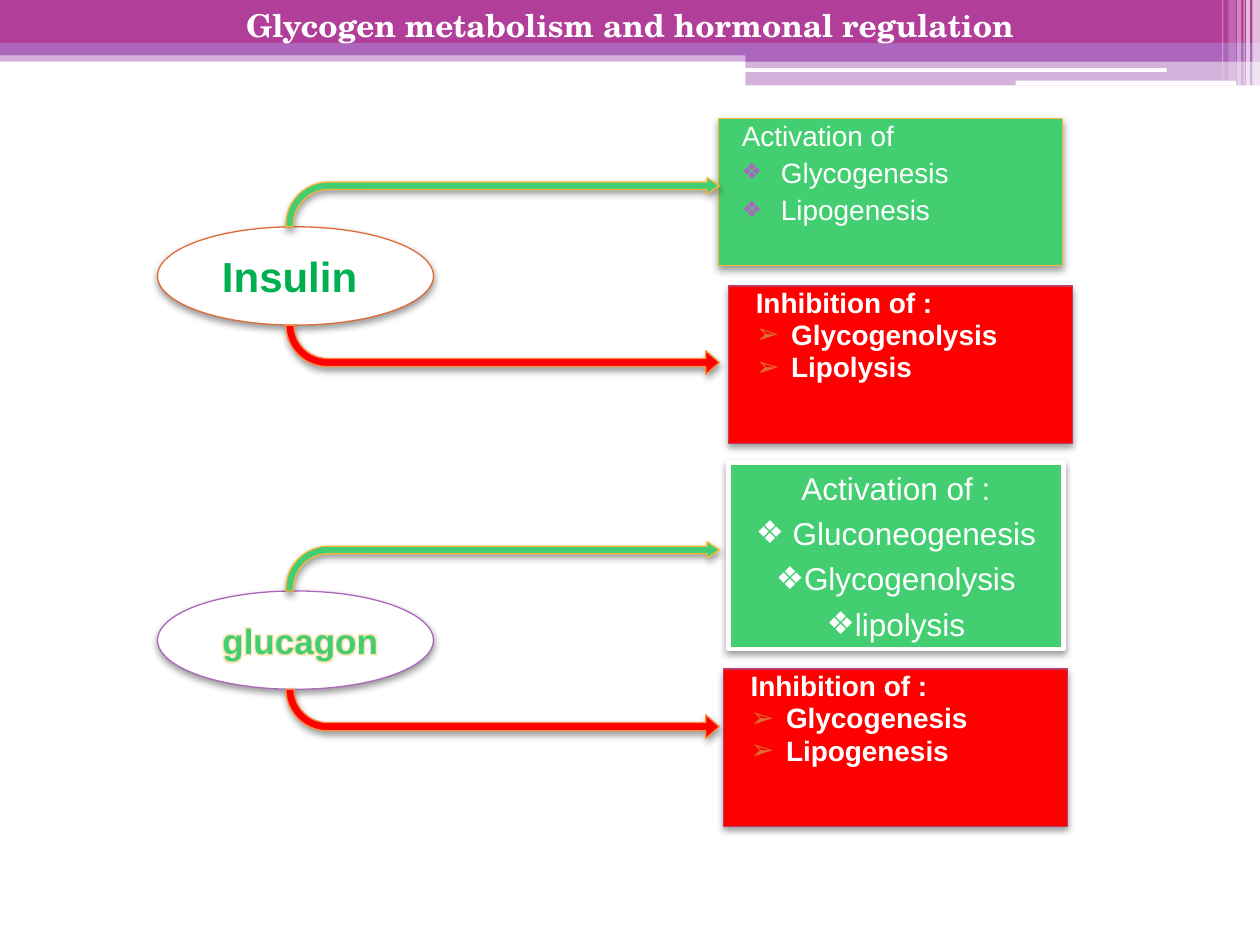
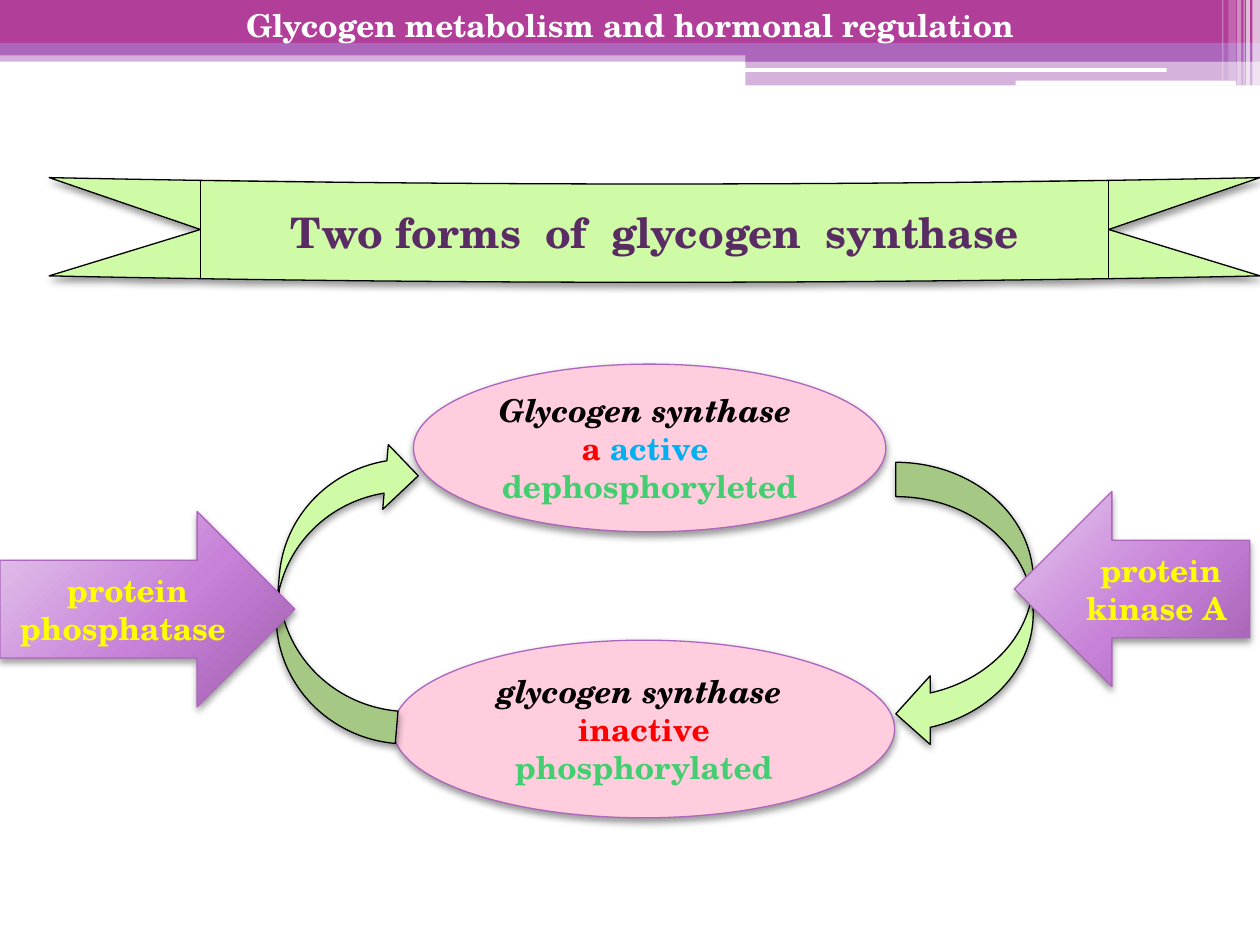
from lxml import etree
from pptx import Presentation
from pptx.dml.color import RGBColor
from pptx.enum import shapes, text
from pptx.oxml import ns
from pptx.util import Pt

MAGENTA = RGBColor(0xB1, 0x3F, 0x9A)
PURPLE = RGBColor(0xAC, 0x66, 0xBB)
PLUM = RGBColor(0x5A, 0x2C, 0x64)
WHITE = RGBColor(0xFF, 0xFF, 0xFF)
BLACK = RGBColor(0, 0, 0)
GREEN = RGBColor(0x44, 0xCE, 0x72)
DARK_GREEN = RGBColor(0x00, 0xB0, 0x50)
LIME = RGBColor(0xCF, 0xFB, 0xA7)
RED = RGBColor(0xFF, 0, 0)
ROSE = RGBColor(0xB8, 0x3D, 0x68)
PINK = RGBColor(0xFF, 0xCD, 0xDD)
RUST = RGBColor(0xDE, 0x6C, 0x36)
ORANGE = RGBColor(0xFA, 0x8D, 0x3D)
GOLD = RGBColor(0xF9, 0xB6, 0x39)
BLUE = RGBColor(0x00, 0xB0, 0xF0)
YELLOW = RGBColor(0xFF, 0xFF, 0)
VIOLET_STOPS = [(0, "E4C8EC"), (55, "C781D8"), (100, "A05FAE")]

SANS, SERIF = "Arial", "TeX Gyre Schola"
KIND = shapes.MSO_SHAPE
CENTER = text.PP_ALIGN.CENTER
TITLE = "Glycogen metabolism and hormonal regulation"

# kind, (left, top, width, height), colour, opacity in percent
BANDS = [
    (KIND.RECTANGLE, (0, 28.8, 720, 6.5), PURPLE, 50),
    (KIND.RECTANGLE, (0, 0, 720, 24.5), MAGENTA, 100),
    (KIND.RECTANGLE, (0, 24.5, 720, 7.2), PURPLE, 100),
    (KIND.RECTANGLE, (426, 28.1, 294, 7.2), PURPLE, 100),
    (KIND.RECTANGLE, (426, 34.6, 294, 14.2), PURPLE, 50),
    (KIND.ROUNDED_RECTANGLE, (425.5, 38.9, 241.2, 2.2), WHITE, 100),
    (KIND.ROUNDED_RECTANGLE, (580.3, 46.1, 126, 2.9), WHITE, 100),
]
# left, width, height, opacity in percent
STRIPES = [
    (715.7, 4.3, 49, 65), (712.1, 2.2, 49, 65), (710.6, 0.7, 49, 60),
    (707, 2.2, 49, 40), (702, 4.3, 46, 20), (698.4, 0.7, 46, 30),
]

ACTIVATION = dict(fill=GREEN, line=GOLD, size=16, bold=False, before=6,
                  spacing=0.8, margin=28.8, indent=-22.3,
                  bullet="❖", bullet_color=PURPLE, bullet_size=80)
FRAMED = dict(fill=GREEN, line=WHITE, line_width=2.5, size=18, bold=False,
              before=4.3, align=CENTER, bullet="❖", bullet_color=WHITE)
INHIBITION = dict(fill=RED, line=ROSE, size=16, bold=True, before=3,
                  spacing=0.8, margin=28.8, indent=-20.2,
                  bullet="➢", bullet_color=RUST)

HORMONES = [
    dict(name="Insulin ", top=129.6, color=DARK_GREEN, size=24, line=RUST, glow=False,
         effects=[
             ((416.2, 163.4, 196.6, 90), INHIBITION,
              ["Inhibition of :", "Glycogenolysis", "Lipolysis"]),
             ((410.4, 67.7, 196.6, 84.2), ACTIVATION,
              ["Activation of", "Glycogenesis", "Lipogenesis"])]),
    dict(name=" glucagon ", top=337.7, color=GREEN, size=20, line=PURPLE, glow=True,
         effects=[
             ((416.2, 264.2, 191.5, 106.6), FRAMED,
              ["Activation of :", " Gluconeogenesis", "Glycogenolysis", "lipolysis"]),
             ((413.3, 382.3, 196.6, 90), INHIBITION,
              ["Inhibition of :", "Glycogenesis", "Lipogenesis"])]),
]
HORMONE_LEFT, HORMONE_WIDTH, HORMONE_HEIGHT = 90, 157.7, 56.2
ARROW_LEFT, ARROW_WIDTH, ARROW_HEIGHT = 163.4, 247.7, 28.1

# box, then lines made of (words, colour, italic)
SYNTHASE_FORMS = [
    ((236.2, 208.1, 270, 95.8),
     [[("Glycogen synthase ", BLACK, True)],
      [("a ", RED, False), ("active ", BLUE, False)],
      [("dephosphoryleted", GREEN, False)]]),
    ((224.6, 365.8, 286.6, 101.5),
     [[("glycogen synthase ", BLACK, True)],
      [("inactive", RED, False)],
      [("phosphorylated", GREEN, False)]]),
]
CYCLE_ARROWS = [
    (KIND.CURVED_LEFT_ARROW, (511.9, 264.2, 78.5, 163.4), 0),
    (KIND.CURVED_DOWN_ARROW, (110.2, 298.8, 172.1, 74.2), 274.9),
]
ENZYMES = [
    (KIND.LEFT_ARROW, (579.6, 280.8, 134.6, 111.6), " protein kinase A"),
    (KIND.RIGHT_ARROW, (0, 292.3, 168.5, 111.6), " protein phosphatase"),
]


def child(parent, tag, **attributes):
    node = etree.SubElement(parent, ns.qn(tag))
    for name, value in attributes.items():
        node.set(name, str(value))
    return node


def add_part(page, kind, box, fill=None, line=None, line_width=0.75, adjust=(), shadow=True):
    part = page.shapes.add_shape(kind, *map(Pt, box))
    part.shadow.inherit = False
    for index, value in enumerate(adjust):
        part.adjustments[index] = value
    if fill is None:
        part.fill.background()
    else:
        part.fill.solid()
        part.fill.fore_color.rgb = fill
    if line is None:
        part.line.fill.background()
    else:
        part.line.color.rgb = line
        part.line.width = Pt(line_width)
    if shadow:
        effects = part._element.spPr.find(ns.qn("a:effectLst"))
        outer = child(effects, "a:outerShdw", blurRad=Pt(4.1), dist=Pt(2),
                      dir=5400000, rotWithShape=0)
        child(child(outer, "a:srgbClr", val="000000"), "a:alpha", val=40000)
    return part


def fill_violet(part):
    """Shade a part outwards from beyond its top left corner."""
    empty = part._element.spPr.find(ns.qn("a:noFill"))
    gradient = etree.Element(ns.qn("a:gradFill"), rotWithShape="1")
    stops = child(gradient, "a:gsLst")
    for place, color in VIOLET_STOPS:
        child(child(stops, "a:gs", pos=place * 1000), "a:srgbClr", val=color)
    way = child(gradient, "a:path", **{"path": "circle"})
    child(way, "a:fillToRect", l=-40000, t=-90000, r=140000, b=190000)
    empty.getparent().replace(empty, gradient)


def style(span, font, size, color, bold=True, italic=False):
    span.font.name = font
    span.font.size = Pt(size)
    span.font.bold = bold
    span.font.italic = italic
    span.font.color.rgb = color


def write_lines(part, lines, font, size):
    """Centre lines of (words, colour, italic) spans in a part."""
    frame = part.text_frame
    frame.word_wrap = True
    for index, line in enumerate(lines):
        para = frame.add_paragraph() if index else frame.paragraphs[0]
        para.alignment = CENTER
        for words, color, italic in line:
            span = para.add_run()
            span.text = words
            style(span, font, size, color, italic=italic)


def add_glow(span):
    fill = span.font._element.find(ns.qn("a:solidFill"))
    effects = etree.Element(ns.qn("a:effectLst"))
    color = child(child(effects, "a:glow", rad=Pt(4)), "a:srgbClr", val=GOLD)
    child(color, "a:alpha", val=40000)
    fill.addnext(effects)


def add_bullet(para, look):
    props = para._p.get_or_add_pPr()
    child(child(props, "a:buClr"), "a:srgbClr", val=look["bullet_color"])
    child(props, "a:buSzPct", val=look.get("bullet_size", 100) * 1000)
    child(props, "a:buFont", typeface=SANS)
    child(props, "a:buChar", char=look["bullet"])


def add_effect_box(page, box, look, lines):
    part = add_part(page, KIND.RECTANGLE, box, look["fill"], look["line"],
                    look.get("line_width", 0.75))
    frame = part.text_frame
    frame.vertical_anchor = text.MSO_ANCHOR.TOP
    frame.text = "\n".join(lines)
    for index, para in enumerate(frame.paragraphs):
        para.alignment = look.get("align", text.PP_ALIGN.LEFT)
        para.line_spacing = look.get("spacing", 1.0)
        para.space_before = Pt(look["before"])
        props = para._p.get_or_add_pPr()
        props.set("marL", str(Pt(look.get("margin", 0))))
        props.set("indent", str(Pt(look.get("indent", 0))))
        if index:
            add_bullet(para, look)
        style(para.runs[0], SANS, look["size"], WHITE, look["bold"])


def add_page(deck):
    """Add a blank slide with the bands and the title."""
    page = deck.slides.add_slide(deck.slide_layouts[6])
    stripes = [(KIND.RECTANGLE, (left, 0, width, height), WHITE, opacity)
               for left, width, height, opacity in STRIPES]
    for kind, box, color, opacity in BANDS + stripes:
        band = add_part(page, kind, box, color, shadow=False)
        if opacity < 100:
            shade = band._element.spPr.find(ns.qn("a:solidFill"))[0]
            child(shade, "a:alpha", val=opacity * 1000)
    title = page.shapes.add_textbox(0, 0, Pt(720), Pt(28.8))
    write_lines(title, [[(TITLE, WHITE, False)]], SERIF, 18)
    return page


def add_hormone_page(deck):
    page = add_page(deck)
    for hormone in HORMONES:
        top = hormone["top"]
        oval = add_part(page, KIND.OVAL, (HORMONE_LEFT, top, HORMONE_WIDTH, HORMONE_HEIGHT),
                        WHITE, hormone["line"])
        write_lines(oval, [[(hormone["name"], hormone["color"], False)]],
                    SANS, hormone["size"])
        if hormone["glow"]:
            add_glow(oval.text_frame.paragraphs[0].runs[0])
        for effect in hormone["effects"]:
            add_effect_box(page, *effect)
        add_part(page, KIND.BENT_ARROW,
                 (ARROW_LEFT, top - ARROW_HEIGHT, ARROW_WIDTH, ARROW_HEIGHT),
                 GREEN, GOLD, adjust=(0.152, 0.166, 0.25, 0.863))
        down = add_part(page, KIND.BENT_ARROW,
                        (ARROW_LEFT, top + HORMONE_HEIGHT, ARROW_WIDTH, ARROW_HEIGHT),
                        RED, ORANGE, adjust=(0.167, 0.24, 0.275, 0.843))
        down._element.spPr.find(ns.qn("a:xfrm")).set("flipV", "1")


def add_synthase_page(deck):
    page = add_page(deck)
    for box, lines in SYNTHASE_FORMS:
        oval = add_part(page, KIND.OVAL, box, PINK, PURPLE)
        write_lines(oval, lines, SERIF, 18)
    for kind, box, turn in CYCLE_ARROWS:
        add_part(page, kind, box, LIME, BLACK).rotation = turn
    for kind, box, name in ENZYMES:
        enzyme = add_part(page, kind, box, line=PURPLE)
        fill_violet(enzyme)
        write_lines(enzyme, [[(name, YELLOW, False)]], SERIF, 18)
    ribbon = add_part(page, KIND.CURVED_DOWN_RIBBON, (28.1, 101.5, 691.9, 59.8),
                      LIME, BLACK, adjust=(0.061, 0.75, 0.061))
    write_lines(ribbon, [[("Two forms  of  glycogen  synthase", PLUM, False)]], SERIF, 24)


def main():
    deck = Presentation()
    deck.slide_width, deck.slide_height = Pt(720), Pt(540)
    add_hormone_page(deck)
    add_synthase_page(deck)
    deck.save("out.pptx")


if __name__ == "__main__":
    main()
